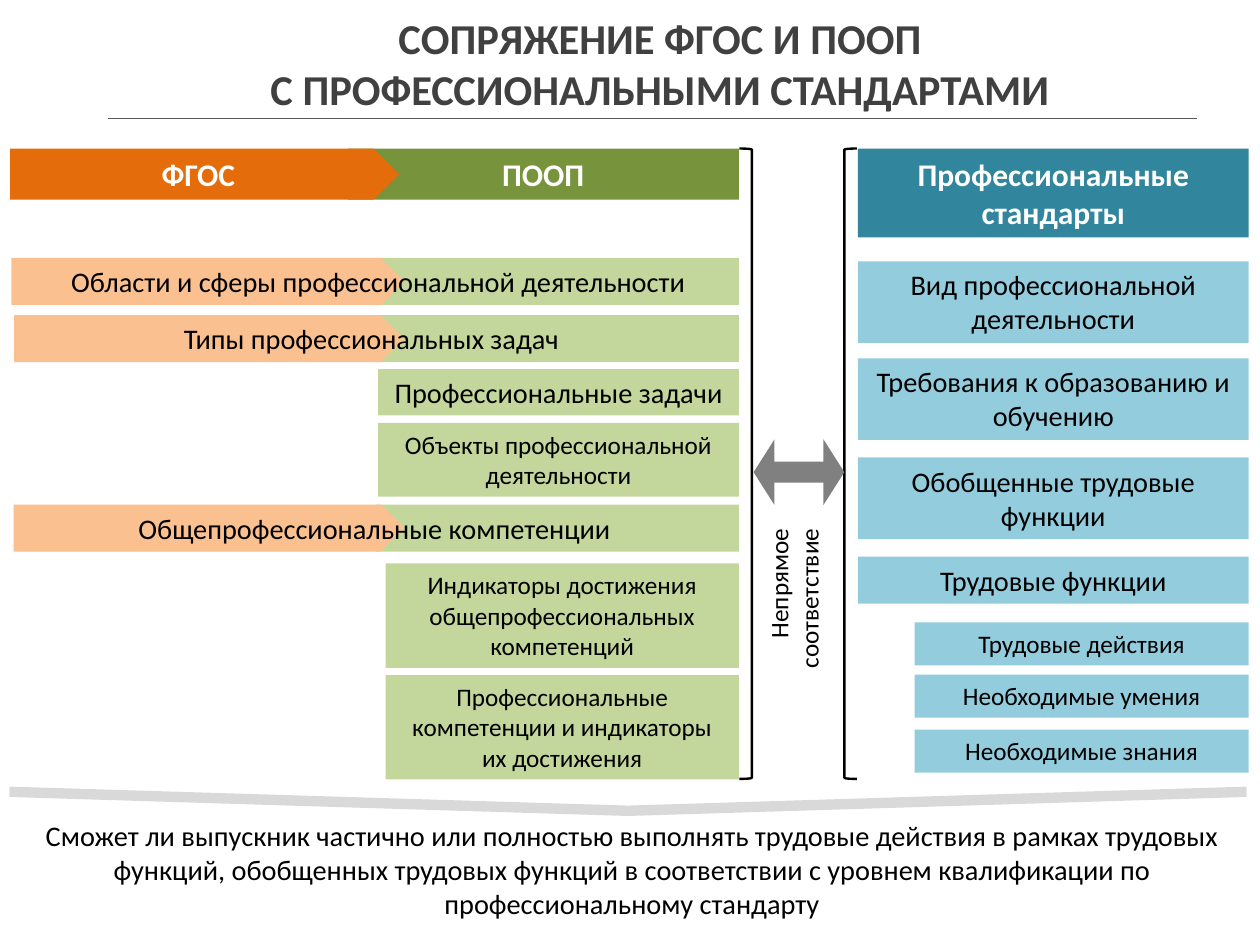
from lxml.etree import SubElement
from pptx import Presentation
from pptx.dml.color import RGBColor
from pptx.enum.shapes import MSO_CONNECTOR, MSO_SHAPE as SHAPE
from pptx.enum.text import MSO_ANCHOR, MSO_AUTO_SIZE, PP_ALIGN
from pptx.oxml.ns import qn
from pptx.util import Inches, Pt

TITLE = "СОПРЯЖЕНИЕ ФГОС И ПООП\vС ПРОФЕССИОНАЛЬНЫМИ СТАНДАРТАМИ"
FGOS, POOP, STANDARDS = "ФГОС", "ПООП", "Профессиональные стандарты"
LINK = "Непрямое соответствие"
QUESTION = ("Сможет ли выпускник частично или полностью выполнять трудовые действия "
            "в рамках трудовых функций, обобщенных трудовых функций в соответствии "
            "с уровнем квалификации по профессиональному стандарту")

# text, top, left edge of the arrow, left and width of the label
SHARED_ROWS = [
    ("Области и сферы профессиональной деятельности", 4.55, 0.2, 0.48, 12.38),
    ("Типы профессиональных задач", 5.56, 0.25, 0.2, 12.7),
    ("Общепрофессиональные компетенции", 8.9, 0.24, 0.33, 12.55),
]
# text, left, top, height, size
POOP_ROWS = [
    ("Профессиональные задачи", 6.67, 6.51, 0.82, "large"),
    ("Объекты профессиональной деятельности", 6.67, 7.46, 1.3, "small"),
    ("Индикаторы достижения общепрофессиональных компетенций", 6.8, 9.94, 1.84, "small"),
    ("Профессиональные компетенции и индикаторы их достижения", 6.8, 11.91, 1.84, "small"),
]
STANDARD_ROWS = [
    ("Вид профессиональной деятельности", 15.13, 4.61, 1.44, "large"),
    ("Требования к образованию и обучению", 15.13, 6.32, 1.44, "large"),
    ("Обобщенные трудовые функции", 15.13, 8.07, 1.44, "large"),
    ("Трудовые функции", 15.13, 9.82, 0.83, "large"),
    ("Трудовые действия", 16.13, 10.98, 0.76, "small"),
    ("Необходимые умения", 16.13, 11.9, 0.76, "small"),
    ("Необходимые знания", 16.13, 12.87, 0.76, "small"),
]

THEME = {
    "font": "Calibri",
    "sizes": {"title": 54, "head": 40, "large": 36, "small": 32},
    "colors": {
        "title": "404040", "rule": "595959", "white": "FFFFFF", "black": "000000",
        "fgos": "E46C0A", "fgos_light": "FAC090",
        "poop": "77933C", "poop_light": "C3D69B",
        "standard": "31859C", "standard_light": "93CDDD",
        "arrow": "808080", "chevron": "D9D9D9",
    },
}
POOP_RIGHT, STANDARD_RIGHT = 13.03, 22.02
PLATE_RIGHT, BAND_LEFT, BAND_HEIGHT = 7.13, 6.63, 0.83
HEAD_TOP, HEAD_HEIGHT = 2.62, 0.9
WIDE_INSETS, NARROW_INSETS = (0.22, 0.11), (0.1, 0.05)


def color(name):
    return RGBColor.from_string(THEME["colors"][name])


def write(sp, text, size, ink="black", bold=False, align=PP_ALIGN.CENTER,
          anchor=MSO_ANCHOR.TOP, insets=WIDE_INSETS):
    tf = sp.text_frame
    tf.word_wrap = True
    tf.auto_size = MSO_AUTO_SIZE.NONE
    tf.vertical_anchor = anchor
    tf.margin_left = tf.margin_right = Inches(insets[0])
    tf.margin_top = tf.margin_bottom = Inches(insets[1])
    tf.text = text
    p = tf.paragraphs[0]
    p.alignment = align
    for r in p.runs:
        r.font.name = THEME["font"]
        r.font.size = Pt(THEME["sizes"][size])
        r.font.bold = bold
        r.font.color.rgb = color(ink)


def add_shape(slide, kind, box, fill=None, line=None, width=0):
    sp = slide.shapes.add_shape(kind, *map(Inches, box))
    sp.shadow.inherit = False
    if fill:
        sp.fill.solid()
        sp.fill.fore_color.rgb = color(fill)
    else:
        sp.fill.background()
    if line:
        sp.line.color.rgb = color(line)
        sp.line.width = Pt(width)
    else:
        sp.line.fill.background()
    return sp


def add_label(slide, box, text, size, **style):
    sp = slide.shapes.add_textbox(*map(Inches, box))
    write(sp, text, size, **style)
    return sp


def add_heading(slide, kind, left, right, height, fill, text):
    sp = add_shape(slide, kind, (left, HEAD_TOP, right - left, height), fill)
    write(sp, text, "head", ink="white", bold=True)


def add_boxes(slide, rows, right, fill):
    for text, left, top, height, size in rows:
        sp = add_shape(slide, SHAPE.RECTANGLE, (left, top, right - left, height), fill)
        write(sp, text, size)


def add_title(slide):
    title = slide.shapes.title
    title.left, title.top, title.width, title.height = map(Inches, (2.17, 0.41, 18.94, 1.41))
    write(title, TITLE, "title", ink="title", bold=True, anchor=MSO_ANCHOR.MIDDLE)
    rule = slide.shapes.add_connector(
        MSO_CONNECTOR.STRAIGHT, *map(Inches, (1.91, 2.08, 21.11, 2.08)))
    rule.line.color.rgb = color("rule")
    rule.line.width = Pt(0.75)
    SubElement(rule._element.spPr, qn("a:effectLst"))


def add_shared_rows(slide):
    """Bands common to both documents: an arrow over a box, one label across."""
    for text, top, left, label_left, label_width in SHARED_ROWS:
        add_shape(slide, SHAPE.RECTANGLE,
                  (BAND_LEFT, top, POOP_RIGHT - BAND_LEFT, BAND_HEIGHT), "poop_light")
        add_shape(slide, SHAPE.PENTAGON,
                  (left, top, PLATE_RIGHT - left, BAND_HEIGHT), "fgos_light")
        add_label(slide, (label_left, top, label_width, BAND_HEIGHT), text, "large")


def add_link(slide):
    for kind, left in ((SHAPE.RIGHT_BRACKET, 13.04), (SHAPE.LEFT_BRACKET, 14.89)):
        add_shape(slide, kind, (left, HEAD_TOP, 0.22, 11.12), line="black", width=3)
    arrow = add_shape(slide, SHAPE.LEFT_RIGHT_ARROW, (13.29, 7.75, 1.6, 1.16), "arrow")
    arrow.adjustments[0] = arrow.adjustments[1] = 0.318
    label = add_label(slide, (13.41, 9.23, 1.28, 2.83), LINK, "small",
                      align=PP_ALIGN.RIGHT, insets=NARROW_INSETS)
    label.text_frame._txBody.bodyPr.set("vert", "vert270")


def add_question(slide):
    chevron = add_shape(slide, SHAPE.CHEVRON, (10.83, 3.24, 0.49, 21.79),
                        "chevron", "chevron", 2)
    chevron.adjustments[0] = 0.683
    chevron.rotation = 90
    add_label(slide, (0.25, 14.39, 21.79, 1.92), QUESTION, "large", insets=NARROW_INSETS)


def main():
    prs = Presentation()
    prs.slide_width, prs.slide_height = Inches(22.22), Inches(16.67)
    slide = prs.slides.add_slide(prs.slide_layouts[5])
    add_title(slide)
    add_heading(slide, SHAPE.RECTANGLE, 6.13, POOP_RIGHT, HEAD_HEIGHT, "poop", POOP)
    add_heading(slide, SHAPE.PENTAGON, 0.18, 7.04, HEAD_HEIGHT, "fgos", FGOS)
    add_heading(slide, SHAPE.RECTANGLE, 15.13, STANDARD_RIGHT, 1.57, "standard", STANDARDS)
    add_shared_rows(slide)
    add_boxes(slide, POOP_ROWS, POOP_RIGHT, "poop_light")
    add_boxes(slide, STANDARD_ROWS, STANDARD_RIGHT, "standard_light")
    add_link(slide)
    add_question(slide)
    prs.save("out.pptx")


if __name__ == "__main__":
    main()
